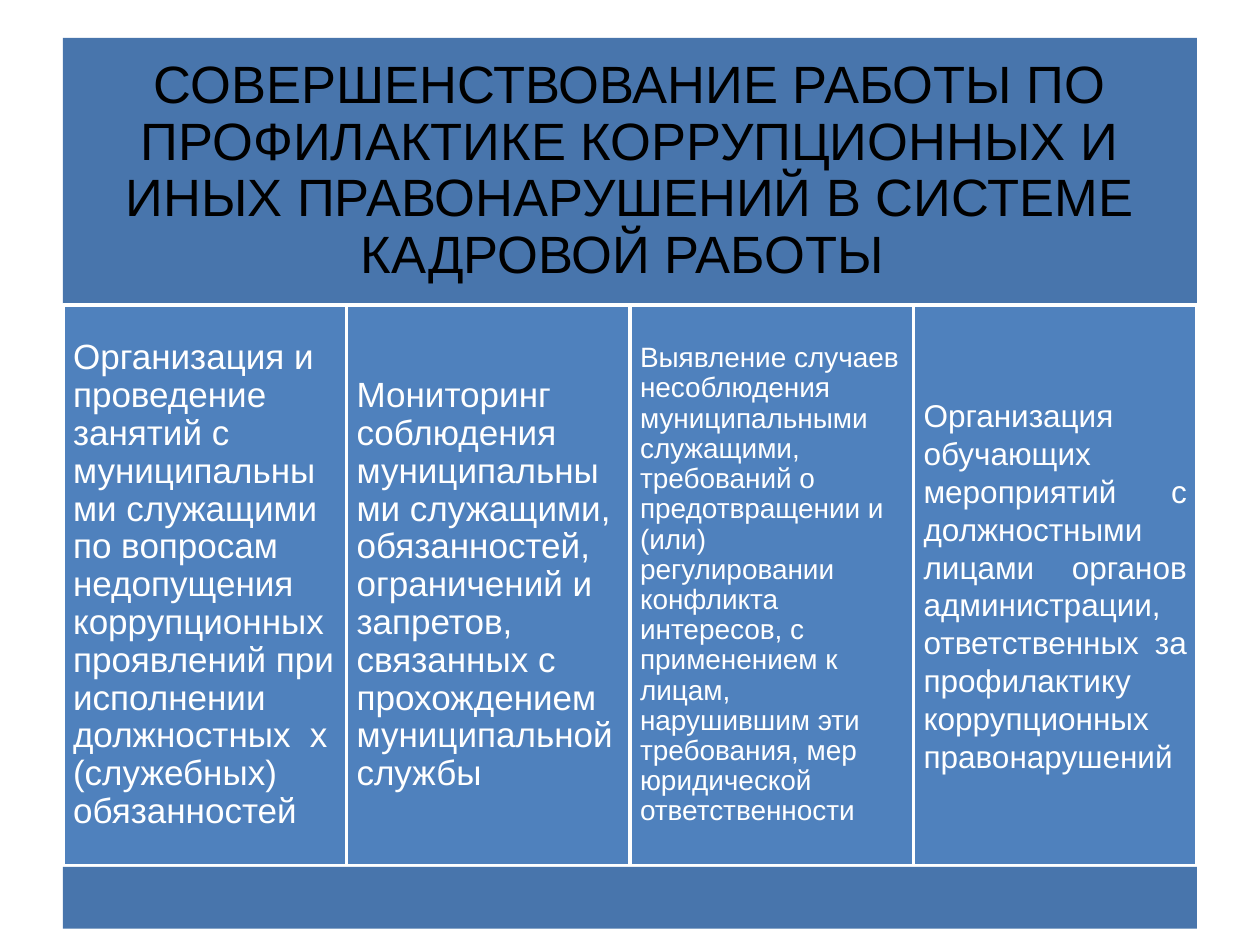
from pptx import Presentation
from pptx.dml.color import RGBColor
from pptx.enum.shapes import MSO_SHAPE
from pptx.enum.text import MSO_ANCHOR, PP_ALIGN
from pptx.util import Inches, Pt

BAND, PANEL, WHITE, BLACK = "4875AC", "4F81BD", "FFFFFF", "000000"

TITLE = ("СОВЕРШЕНСТВОВАНИЕ РАБОТЫ ПО ПРОФИЛАКТИКЕ КОРРУПЦИОННЫХ И ИНЫХ "
         "ПРАВОНАРУШЕНИЙ В СИСТЕМЕ КАДРОВОЙ РАБОТЫ ")

# text, font size, alignment, line spacing, space after
COLUMNS = [
    ("Организация и проведение занятий с муниципальными служащими по вопросам "
     "недопущения коррупционных проявлений при исполнении должностных  х "
     "(служебных) обязанностей", 20, PP_ALIGN.LEFT, 0.9, 7),
    ("Мониторинг соблюдения муниципальными служащими, обязанностей, ограничений "
     "и запретов, связанных с прохождением муниципальной службы",
     20, PP_ALIGN.LEFT, 0.9, 7),
    ("Выявление случаев несоблюдения муниципальными служащими, требований о "
     "предотвращении и (или) регулировании конфликта интересов, с применением к "
     "лицам, нарушившим эти требования, мер юридической ответственности",
     16, PP_ALIGN.LEFT, 0.9, 6.3),
    ("Организация обучающих мероприятий с должностными лицами органов "
     "администрации, ответственных за профилактику коррупционных правонарушений",
     18, PP_ALIGN.JUSTIFY, 1.0, 0),
]


def color(hex_value):
    return RGBColor.from_string(hex_value)


def add_box(group, box, fill, line=None):
    """Add a flat rectangle; box is left, top, width, height in inches."""
    shape = group.shapes.add_shape(MSO_SHAPE.RECTANGLE, *map(Inches, box))
    shape.shadow.inherit = False
    shape.fill.solid()
    shape.fill.fore_color.rgb = color(fill)
    if line:
        shape.line.color.rgb = color(line)
        shape.line.width = Pt(2)
    else:
        shape.line.fill.background()
    return shape


def set_text(shape, text, size, hex_value, inset, para_format):
    frame = shape.text_frame
    frame.word_wrap = True
    frame.vertical_anchor = MSO_ANCHOR.MIDDLE
    for side in ("left", "top", "right", "bottom"):
        setattr(frame, f"margin_{side}", Inches(inset))
    para = frame.paragraphs[0]
    for name, value in para_format.items():
        setattr(para, name, value)
    span = para.add_run()
    span.text = text
    span.font.name = "Arial"
    span.font.size = Pt(size)
    span.font.color.rgb = color(hex_value)


def add_title(group, box):
    shape = add_box(group, box, BAND)
    set_text(shape, TITLE, 30, BLACK, 0.13, {
        "alignment": PP_ALIGN.CENTER, "line_spacing": 0.9, "space_after": Pt(10.5)})


def add_columns(group, box):
    left, top, width, height = box
    step = width / len(COLUMNS)
    for index, (text, size, alignment, spacing, after) in enumerate(COLUMNS):
        shape = add_box(group, (left + index * step, top, step, height), PANEL, WHITE)
        set_text(shape, text, size, WHITE, 0.08, {
            "alignment": alignment, "line_spacing": spacing, "space_after": Pt(after)})


def main():
    deck = Presentation()
    deck.slide_width, deck.slide_height = Inches(10), Inches(7.5)
    page = deck.slides.add_slide(deck.slide_layouts[6])
    group = page.shapes.add_group_shape()
    add_title(group, (0.5, 0.3, 9, 2.12))
    add_columns(group, (0.5, 2.42, 9, 4.45))
    add_box(group, (0.5, 6.88, 9, 0.49), BAND)
    deck.save("out.pptx")


if __name__ == "__main__":
    main()
